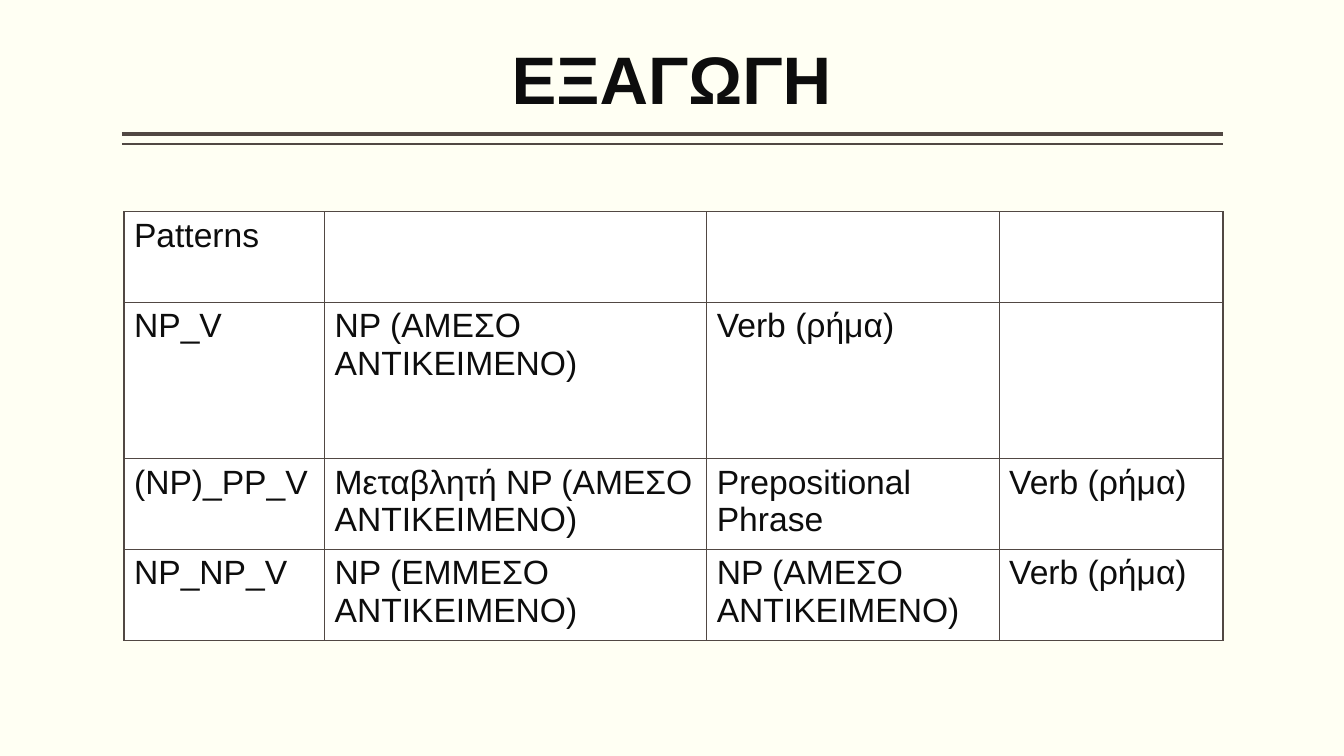
from lxml.etree import SubElement
from pptx import Presentation
from pptx.dml.color import RGBColor
from pptx.enum.shapes import MSO_CONNECTOR
from pptx.enum.text import MSO_ANCHOR, PP_ALIGN
from pptx.oxml import parse_xml
from pptx.oxml.ns import nsdecls, qn
from pptx.util import Inches, Pt

FONT = "Arial"
PAPER, WHITE, INK, RULE = "FFFFF3", "FFFFFF", "0D0D0D", "514843"
COLUMN_WIDTHS = [1.99, 3.79, 2.9, 2.22]
ROW_HEIGHTS = [0.9, 1.55, 0.9, 0.9]
PATTERNS = [
    ["Patterns", "", "", ""],
    ["NP_V", "NP (ΑΜΕΣΟ ΑΝΤΙΚΕΙΜΕΝΟ)", "Verb (ρήμα)", ""],
    ["(NP)_PP_V", "Μεταβλητή NP (ΑΜΕΣΟ ΑΝΤΙΚΕΙΜΕΝΟ)", "Prepositional Phrase", "Verb (ρήμα)"],
    ["NP_NP_V", "NP (ΕΜΜΕΣΟ ΑΝΤΙΚΕΙΜΕΝΟ)", "NP (ΑΜΕΣΟ ΑΝΤΙΚΕΙΜΕΝΟ)", "Verb (ρήμα)"],
]


def color(value):
    return RGBColor.from_string(value)


def write_text(frame, text, size=24, bold=False, align=PP_ALIGN.LEFT, spacing=1.0):
    para = frame.paragraphs[0]
    para.alignment = align
    para.line_spacing = spacing
    span = para.add_run()
    span.text = text
    span.font.name = FONT
    span.font.size = Pt(size)
    span.font.bold = bold
    span.font.color.rgb = color(INK)


def add_title(page, text, left, top, width, height):
    box = page.shapes.add_textbox(Inches(left), Inches(top), Inches(width), Inches(height))
    frame = box.text_frame
    frame.word_wrap = True
    frame.vertical_anchor = MSO_ANCHOR.BOTTOM
    frame.margin_left = frame.margin_right = 0
    write_text(frame, text, size=48, bold=True, align=PP_ALIGN.CENTER, spacing=0.9)


def add_double_rule(page, left, top, width, gap=0.1):
    """Draw a thick line with a thin one below it."""
    for index, weight in enumerate([3, 1]):
        y = Inches(top + index * gap)
        line = page.shapes.add_connector(
            MSO_CONNECTOR.STRAIGHT, Inches(left), y, Inches(left + width), y)
        line.line.color.rgb = color(RULE)
        line.line.width = Pt(weight)
        SubElement(line._element.spPr, qn("a:effectLst"))


def add_borders(cell, weight=1):
    properties = cell._tc.get_or_add_tcPr()
    for index, side in enumerate(["lnL", "lnR", "lnT", "lnB"]):
        properties.insert(index, parse_xml(
            f'<a:{side} {nsdecls("a")} w="{Pt(weight)}"><a:solidFill>'
            f'<a:srgbClr val="{RULE}"/></a:solidFill></a:{side}>'))


def add_pattern_table(page, rows, left, top):
    table = page.shapes.add_table(
        len(rows), len(COLUMN_WIDTHS), Inches(left), Inches(top),
        Inches(sum(COLUMN_WIDTHS)), Inches(sum(ROW_HEIGHTS))).table
    table.first_row = table.horz_banding = False
    for column, width in zip(table.columns, COLUMN_WIDTHS):
        column.width = Inches(width)
    for row, height, texts in zip(table.rows, ROW_HEIGHTS, rows):
        row.height = Inches(height)
        for cell, text in zip(row.cells, texts):
            cell.fill.solid()
            cell.fill.fore_color.rgb = color(WHITE)
            add_borders(cell)
            if text:
                write_text(cell.text_frame, text)


def main():
    deck = Presentation()
    deck.slide_width, deck.slide_height = Inches(13.33), Inches(7.5)
    page = deck.slides.add_slide(deck.slide_layouts[6])
    page.background.fill.solid()
    page.background.fill.fore_color.rgb = color(PAPER)
    add_double_rule(page, 1.21, 1.33, 10.92)
    add_title(page, "ΕΞΑΓΩΓΗ", 0.8, 0.16, 11.72, 1.07)
    add_pattern_table(page, PATTERNS, 1.23, 2.1)
    deck.save("out.pptx")


if __name__ == "__main__":
    main()
